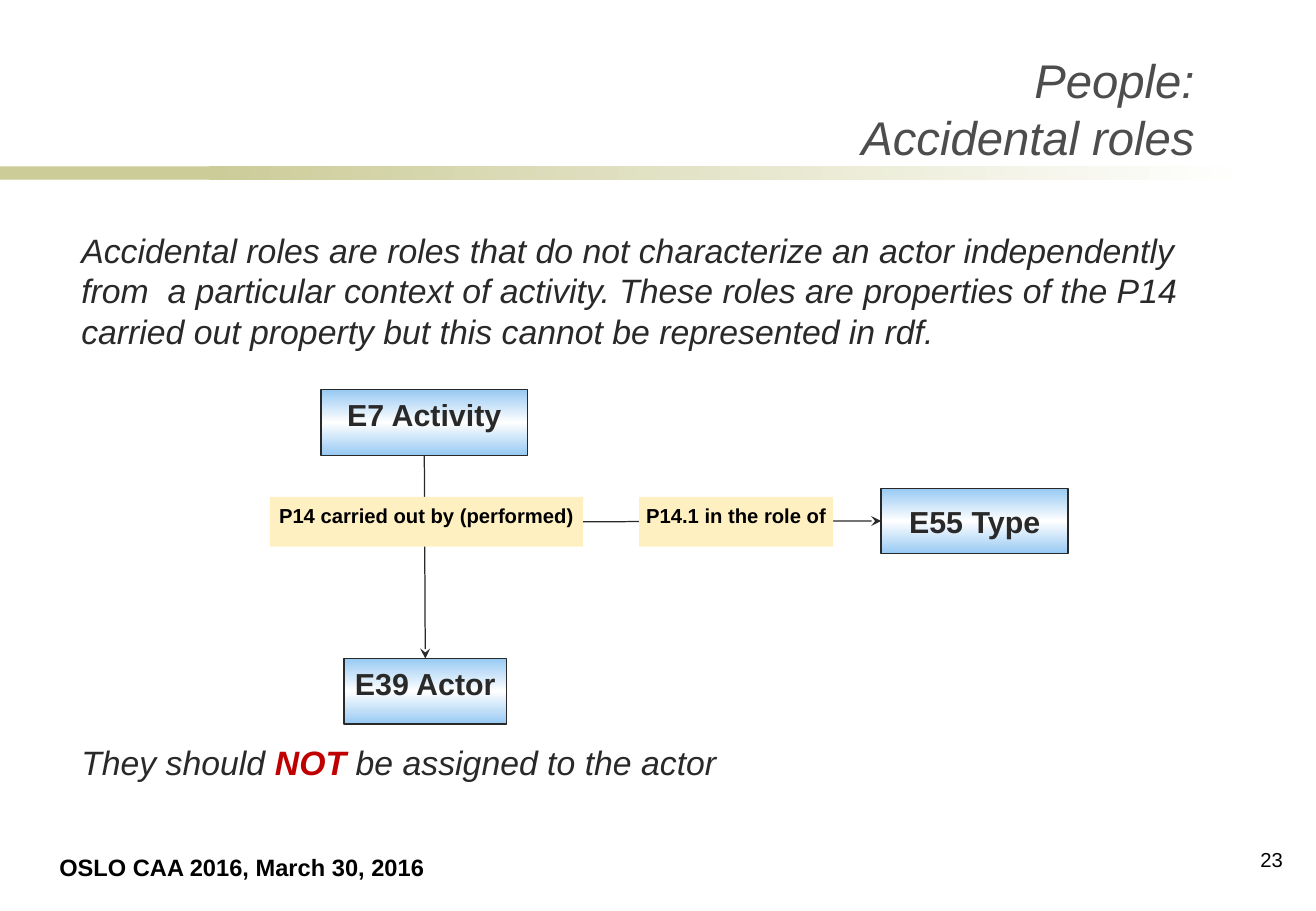
from copy import deepcopy
from dataclasses import dataclass

from pptx import Presentation
from pptx.dml.color import RGBColor
from pptx.enum.shapes import MSO_CONNECTOR, MSO_SHAPE
from pptx.enum.text import MSO_ANCHOR, MSO_AUTO_SIZE, PP_ALIGN
from pptx.oxml.ns import qn
from pptx.util import Cm, Pt
from lxml.etree import SubElement


@dataclass(frozen=True)
class Theme:
    font: str = "Arial"
    title: str = "4D4D4D"
    ink: str = "292929"
    black: str = "000000"
    alert: str = "C00000"
    olive: str = "CCCC99"
    white: str = "FFFFFF"
    blue: str = "97C9F3"
    cream: str = "FFF0C2"
    title_size: int = 28
    body_size: int = 20
    node_size: int = 18
    footer_size: int = 14
    label_size: int = 12
    line_width: float = 0.75


THEME = Theme()


def rgb(color):
    return RGBColor.from_string(color)


def add_run(p, text, size, color, bold=False, italic=False):
    r = p.add_run()
    r.text = text
    font = r.font
    font.name, font.size = THEME.font, Pt(size)
    font.bold, font.italic = bold, italic
    font.color.rgb = rgb(color)


def set_frame(tf, anchor=MSO_ANCHOR.TOP, wrap=True, inset=0.25):
    """Set anchor, wrapping and side insets; return the first paragraph."""
    tf.auto_size = MSO_AUTO_SIZE.NONE
    tf.vertical_anchor, tf.word_wrap = anchor, wrap
    tf.margin_left = tf.margin_right = Cm(inset)
    tf.margin_top = tf.margin_bottom = Cm(0.13)
    return tf.paragraphs[0]


def add_text(s, left, top, width, height, wrap=True):
    sp = s.shapes.add_textbox(Cm(left), Cm(top), Cm(width), Cm(height))
    return set_frame(sp.text_frame, wrap=wrap)


def add_rect(s, left, top, width, height):
    sp = s.shapes.add_shape(MSO_SHAPE.RECTANGLE, Cm(left), Cm(top), Cm(width), Cm(height))
    sp.shadow.inherit = False
    sp.line.fill.background()
    return sp


def fill_solid(sp, color):
    sp.fill.solid()
    sp.fill.fore_color.rgb = rgb(color)


def fill_gradient(sp, colors, angle):
    """Spread two or more colours evenly along the angle."""
    sp.fill.gradient()
    sp.fill.gradient_angle = angle
    stop_list = sp.element.spPr.find(".//" + qn("a:gsLst"))
    for _ in colors[2:]:
        stop_list.append(deepcopy(stop_list[0]))
    for i, (stop, color) in enumerate(zip(sp.fill.gradient_stops, colors)):
        stop.position = i / (len(colors) - 1)
        stop.color.rgb = rgb(color)


def add_node(s, text, left, top, width, anchor=MSO_ANCHOR.TOP):
    """Blue class box of the diagram."""
    sp = add_rect(s, left, top, width, 1.37)
    fill_gradient(sp, (THEME.blue, THEME.white, THEME.blue), 90)
    sp.line.color.rgb = rgb(THEME.ink)
    sp.line.width = Pt(THEME.line_width)
    p = set_frame(sp.text_frame, anchor, wrap=False, inset=0.15)
    p.alignment = PP_ALIGN.CENTER
    add_run(p, text, THEME.node_size, THEME.ink, bold=True)
    return sp


def add_label(s, text, left, top, width):
    """Cream property label lying on an arrow."""
    sp = add_rect(s, left, top, width, 1.04)
    fill_solid(sp, THEME.cream)
    p = set_frame(sp.text_frame, wrap=False, inset=0.05)
    p.alignment = PP_ALIGN.CENTER
    add_run(p, text, THEME.label_size, THEME.black, bold=True)
    return sp


def add_arrow(s, start, start_site, end, end_site):
    line = s.shapes.add_connector(MSO_CONNECTOR.STRAIGHT, 0, 0, 0, 0)
    line.begin_connect(start, start_site)
    line.end_connect(end, end_site)
    line.line.color.rgb = rgb(THEME.ink)
    line.line.width = Pt(THEME.line_width)
    SubElement(line.line._get_or_add_ln(), qn("a:tailEnd"), type="stealth")
    SubElement(line.element.spPr, qn("a:effectLst"))


def add_header(s, left, top, width, height):
    """Title above a band that fades out to the right."""
    band_top = top + height - 0.1
    fill_solid(add_rect(s, 0, band_top, 6.43, 0.28), THEME.olive)
    fade = add_rect(s, 4.37, band_top, 21.79, 0.28)
    fill_gradient(fade, (THEME.olive, THEME.white), 0)

    title = s.shapes.title
    title.left, title.top = Cm(left), Cm(top)
    title.width, title.height = Cm(width), Cm(height)
    p = set_frame(title.text_frame, MSO_ANCHOR.BOTTOM)
    p.alignment = PP_ALIGN.RIGHT
    add_run(p, "People:", THEME.title_size, THEME.title, italic=True)
    p.add_line_break()
    add_run(p, "Accidental roles", THEME.title_size, THEME.title, italic=True)


def add_body(s, left, top, width):
    """Definition above the diagram and conclusion below it."""
    size, ink = THEME.body_size, THEME.ink
    p = add_text(s, left, top, width, 2.8)
    add_run(p, "Accidental roles are roles that do not characterize an actor independently "
               "from  a particular context of activity. These roles are properties of the P14 "
               "carried out property but this cannot be represented in rdf.",
            size, ink, italic=True)
    p = add_text(s, left, top + 10.72, width, 1.1)
    add_run(p, "They should ", size, ink, italic=True)
    add_run(p, "NOT ", size, THEME.alert, bold=True, italic=True)
    add_run(p, "be assigned to the actor", size, ink, italic=True)


def add_diagram(s, left, top):
    label_top = top + 2.24
    actor = add_node(s, "E39 Actor", left + 1.55, top + 5.62, 3.4)
    role_type = add_node(s, "E55 Type", left + 12.78, top + 2.06, 3.91, MSO_ANCHOR.MIDDLE)
    activity = add_node(s, "E7 Activity", left + 1.07, top, 4.32)
    add_arrow(s, activity, 2, actor, 0)
    performed = add_label(s, "P14 carried out by (performed)", left, label_top, 6.55)
    add_arrow(s, performed, 3, role_type, 1)
    add_label(s, "P14.1 in the role of", left + 7.72, label_top, 4.06)


def add_footer(s, left, top):
    p = add_text(s, left, top, 8.18, 0.86, wrap=False)
    add_run(p, "OSLO CAA 2016, March 30, 2016", THEME.footer_size, THEME.black, bold=True)
    p = add_text(s, left + 24.84, top - 0.12, 1.24, 1.07)
    p.alignment = PP_ALIGN.RIGHT
    add_run(p, "23", THEME.label_size, THEME.black)


def main():
    prs = Presentation()
    prs.slide_width, prs.slide_height = Cm(27.51), Cm(19.05)
    s = prs.slides.add_slide(prs.slide_layouts.get_by_name("Title Only"))
    add_header(s, 5.36, 0.33, 19.86, 3.25)
    add_body(s, 1.45, 4.67, 24.77)
    add_diagram(s, 5.64, 8.15)
    add_footer(s, 0.99, 17.7)
    prs.save("out.pptx")


if __name__ == "__main__":
    main()
